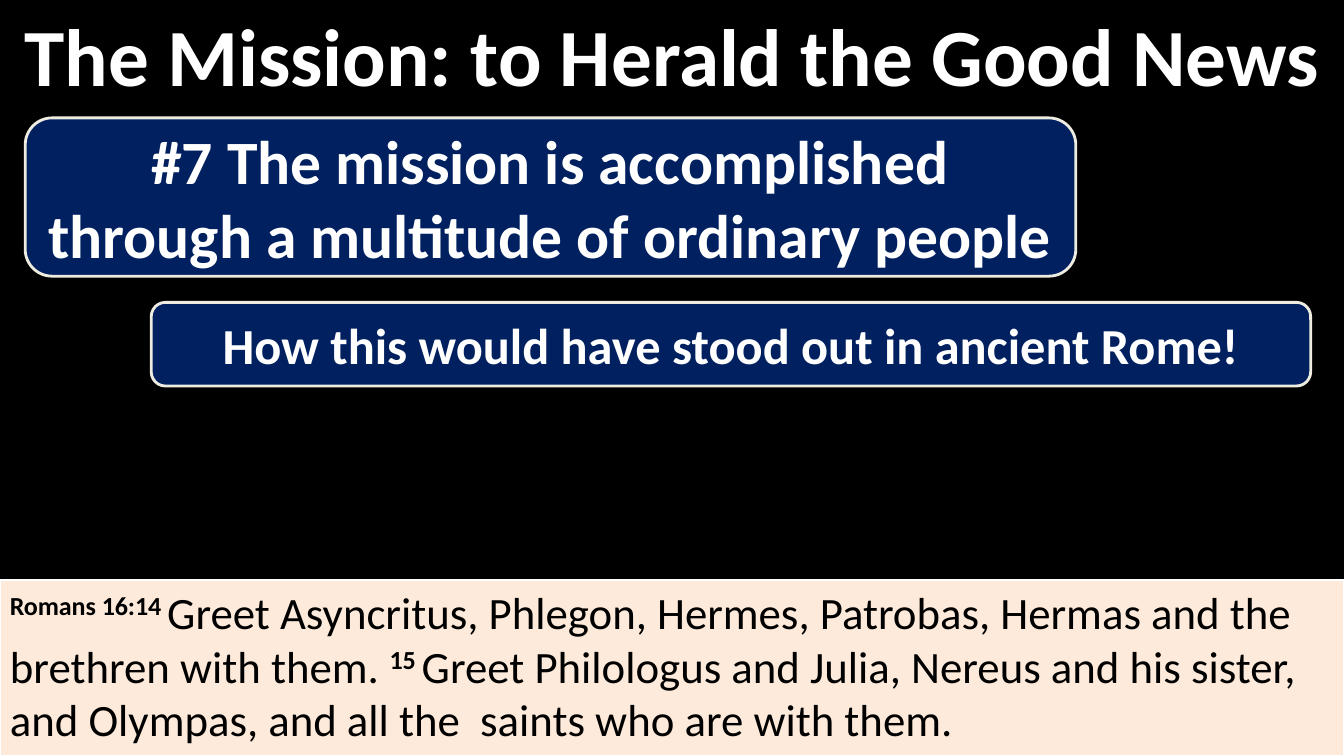
"""Build the mission slide with its callouts and Bible verse."""
from dataclasses import dataclass

from pptx import Presentation
from pptx.dml.color import RGBColor
from pptx.enum.shapes import MSO_SHAPE
from pptx.enum.text import MSO_ANCHOR, PP_ALIGN
from pptx.util import Inches, Pt


@dataclass(frozen=True)
class Theme:
    """Hold the colours, font and type sizes."""
    font: str = "Calibri"
    black: str = "000000"
    white: str = "FFFFFF"
    navy: str = "002060"
    cream: str = "EEECE1"
    peach: str = "FDEADA"
    title: int = 58
    point: int = 44
    note: int = 36
    verse: int = 32


class Deck:
    """Draw styled elements on the current slide."""

    def __init__(self, theme, width, height):
        """Open a deck with one blank slide."""
        self.theme = theme
        self.show = Presentation()
        self.show.slide_width = Inches(width)
        self.show.slide_height = Inches(height)
        self.slide = self.show.slides.add_slide(self.show.slide_layouts[6])
        self.paint(self.slide.background.fill, theme.black)

    def paint(self, fill, color):
        """Make a fill solid."""
        fill.solid()
        fill.fore_color.rgb = RGBColor.from_string(color)

    def letter(self, shape, runs, size, color, align, anchor):
        """Add runs of text, raised or plain."""
        frame = shape.text_frame
        frame.word_wrap = True
        frame.vertical_anchor = anchor
        para = frame.paragraphs[0]
        para.alignment = align
        for text, bold, raised in runs:
            run = para.add_run()
            run.text = text
            run.font.name = self.theme.font
            run.font.size = Pt(size)
            run.font.bold = bold
            run.font.color.rgb = RGBColor.from_string(color)
            if raised:
                run.font._element.set("baseline", "30000")

    def shape(self, kind, box, fill, line, weight):
        """Add a filled, outlined shape."""
        shape = self.slide.shapes.add_shape(kind, *map(Inches, box))
        shape.shadow.inherit = False
        self.paint(shape.fill, fill)
        self.paint(shape.line.fill, line)
        shape.line.width = Pt(weight)
        return shape

    def title(self, box, text):
        """Add the centred title."""
        shape = self.slide.shapes.add_textbox(*map(Inches, box))
        self.letter(shape, [(text, True, False)], self.theme.title,
                    self.theme.white, PP_ALIGN.CENTER, MSO_ANCHOR.MIDDLE)

    def verse(self, box, parts):
        """Add the verse panel from pairs of label and text."""
        look = self.theme
        shape = self.shape(MSO_SHAPE.RECTANGLE, box, look.peach, look.white, 1.5)
        runs = [run for label, text in parts
                for run in ((label, True, True), (text, False, False))]
        self.letter(shape, runs, look.verse, look.black,
                    PP_ALIGN.LEFT, MSO_ANCHOR.TOP)

    def callout(self, box, text, size):
        """Add a navy callout with its tip on the lower edge."""
        look = self.theme
        shape = self.shape(MSO_SHAPE.ROUNDED_RECTANGULAR_CALLOUT, box,
                           look.navy, look.cream, 2)
        for spot, value in enumerate((-0.22, 0.5, 0.17)):
            shape.adjustments[spot] = value
        self.letter(shape, [(text, True, False)], size, look.white,
                    PP_ALIGN.CENTER, MSO_ANCHOR.MIDDLE)


def main():
    """Build and save the slide."""
    look = Theme()
    wide, high = 13.33, 7.5
    deck = Deck(look, wide, high)
    deck.title((0, 0, wide, 1.08), "The Mission: to Herald the Good News")
    deck.verse((0, 5.75, wide, high - 5.75), [
        ("Romans 16:14 ",
         "Greet Asyncritus, Phlegon, Hermes, Patrobas, Hermas and the "
         "brethren with them. "),
        ("15 ",
         "Greet Philologus and Julia, Nereus and his sister, and Olympas, "
         "and all the  saints who are with them."),
    ])
    deck.callout((0.25, 1.17, 10.42, 1.57),
                 "#7 The mission is accomplished through a multitude of "
                 "ordinary people", look.point)
    deck.callout((1.5, 3, 11.5, 0.83),
                 "How this would have stood out in ancient Rome!", look.note)
    deck.show.save("out.pptx")


if __name__ == "__main__":
    main()
